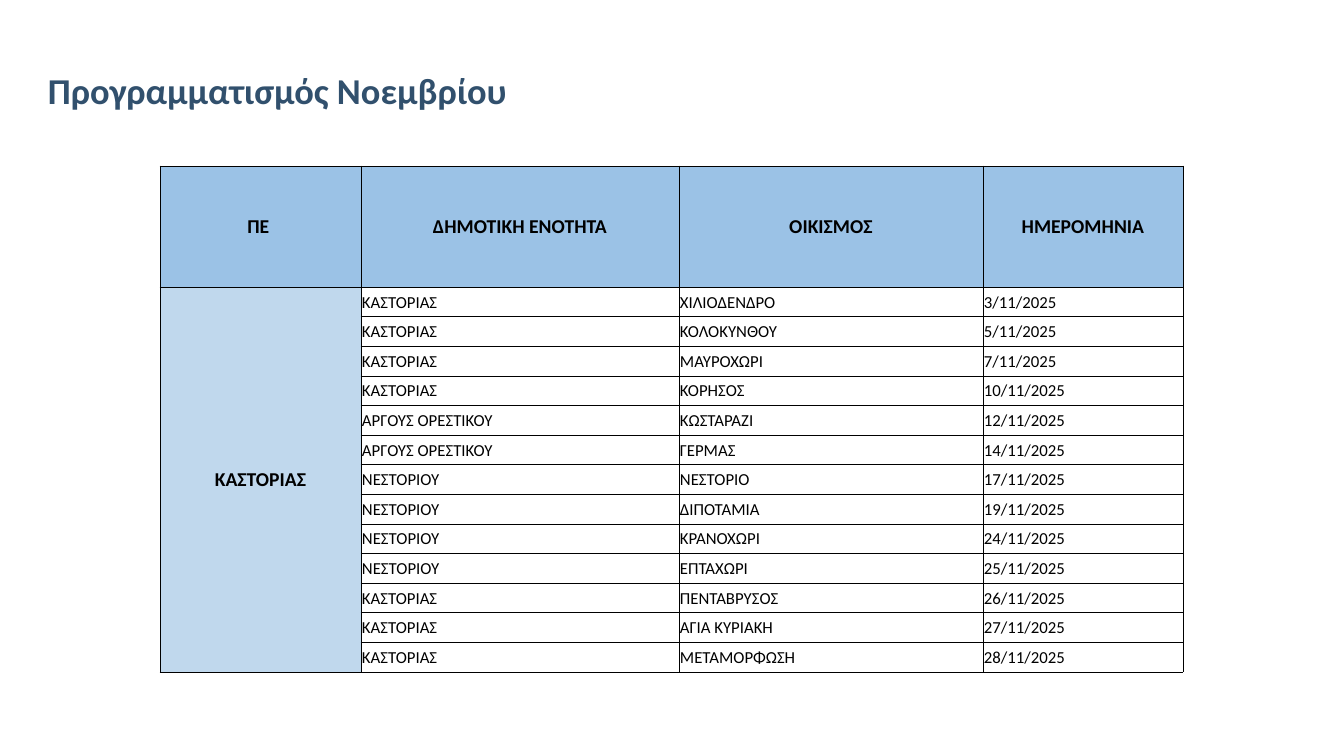
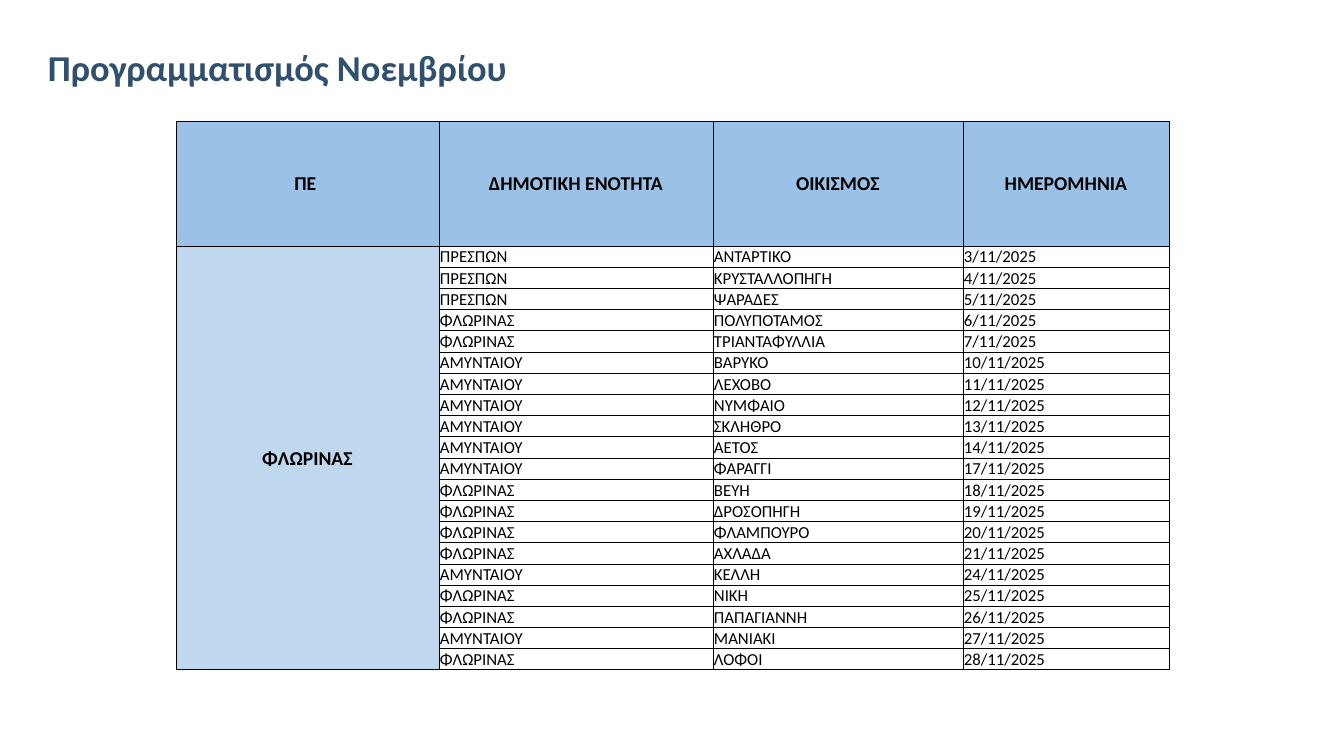
from typing import NamedTuple

from lxml import etree
from pptx import Presentation
from pptx.dml.color import RGBColor
from pptx.enum.text import MSO_ANCHOR, PP_ALIGN
from pptx.oxml.ns import qn
from pptx.util import Emu, Pt

EMU_PER_PX = 914400 / 100.8
FONT = "Calibri"
COLORS = {
    "title": "31506D",
    "text": "000000",
    "border": "000000",
    "header": "9BC2E6",
    "region": "C0D8ED",
}
TOP, MIDDLE, BOTTOM = MSO_ANCHOR.TOP, MSO_ANCHOR.MIDDLE, MSO_ANCHOR.BOTTOM
LEFT, CENTER = PP_ALIGN.LEFT, PP_ALIGN.CENTER

TITLE = "Προγραμματισμός Νοεμβρίου"
HEADERS = ("ΠΕ ", "ΔΗΜΟΤΙΚΗ ΕΝΟΤΗΤΑ", "ΟΙΚΙΣΜΟΣ", "ΗΜΕΡΟΜΗΝΙΑ")


class Visit(NamedTuple):
    municipality: str
    village: str
    day: int


class Schedule(NamedTuple):
    region: str
    title_height: int
    left: int
    top: int
    columns: tuple[int, ...]
    header_height: int
    body_height: int
    visits: list[Visit]


SCHEDULES = [
    Schedule("ΚΑΣΤΟΡΙΑΣ", 92, 160, 166, (201, 318, 304, 200), 121, 385, [
        Visit("ΚΑΣΤΟΡΙΑΣ", "ΧΙΛΙΟΔΕΝΔΡΟ", 3),
        Visit("ΚΑΣΤΟΡΙΑΣ", "ΚΟΛΟΚΥΝΘΟΥ", 5),
        Visit("ΚΑΣΤΟΡΙΑΣ", "ΜΑΥΡΟΧΩΡΙ", 7),
        Visit("ΚΑΣΤΟΡΙΑΣ", "ΚΟΡΗΣΟΣ", 10),
        Visit("ΑΡΓΟΥΣ ΟΡΕΣΤΙΚΟΥ", "ΚΩΣΤΑΡΑΖΙ", 12),
        Visit("ΑΡΓΟΥΣ ΟΡΕΣΤΙΚΟΥ", "ΓΕΡΜΑΣ", 14),
        Visit("ΝΕΣΤΟΡΙΟΥ", "ΝΕΣΤΟΡΙΟ", 17),
        Visit("ΝΕΣΤΟΡΙΟΥ", "ΔΙΠΟΤΑΜΙΑ", 19),
        Visit("ΝΕΣΤΟΡΙΟΥ", "ΚΡΑΝΟΧΩΡΙ", 24),
        Visit("ΝΕΣΤΟΡΙΟΥ", "ΕΠΤΑΧΩΡΙ", 25),
        Visit("ΚΑΣΤΟΡΙΑΣ", "ΠΕΝΤΑΒΡΥΣΟΣ", 26),
        Visit("ΚΑΣΤΟΡΙΑΣ", "ΑΓΙΑ ΚΥΡΙΑΚΗ", 27),
        Visit("ΚΑΣΤΟΡΙΑΣ", "ΜΕΤΑΜΟΡΦΩΣΗ", 28),
    ]),
    Schedule("ΦΛΩΡΙΝΑΣ", 69, 176, 121, (263, 274, 250, 206), 125, 420, [
        Visit("ΠΡΕΣΠΩΝ", "ΑΝΤΑΡΤΙΚΟ", 3),
        Visit("ΠΡΕΣΠΩΝ", "ΚΡΥΣΤΑΛΛΟΠΗΓΗ", 4),
        Visit("ΠΡΕΣΠΩΝ", "ΨΑΡΑΔΕΣ", 5),
        Visit("ΦΛΩΡΙΝΑΣ", "ΠΟΛΥΠΟΤΑΜΟΣ", 6),
        Visit("ΦΛΩΡΙΝΑΣ", "ΤΡΙΑΝΤΑΦΥΛΛΙΑ", 7),
        Visit("AMYNTAIOY", "ΒΑΡΥΚΟ", 10),
        Visit("AMYNTAIOY", "ΛΕΧΟΒΟ", 11),
        Visit("AMYNTAIOY", "ΝΥΜΦΑΙΟ", 12),
        Visit("AMYNTAIOY", "ΣΚΛΗΘΡΟ", 13),
        Visit("AMYNTAIOY", "ΑΕΤΟΣ", 14),
        Visit("AMYNTAIOY", "ΦΑΡΑΓΓΙ", 17),
        Visit("ΦΛΩΡΙΝΑΣ", "ΒΕΥΗ", 18),
        Visit("ΦΛΩΡΙΝΑΣ", "ΔΡΟΣΟΠΗΓΗ", 19),
        Visit("ΦΛΩΡΙΝΑΣ", "ΦΛΑΜΠΟΥΡΟ", 20),
        Visit("ΦΛΩΡΙΝΑΣ", "ΑΧΛΑΔΑ", 21),
        Visit("ΑΜΥΝΤΑΙΟΥ", "ΚΕΛΛΗ", 24),
        Visit("ΦΛΩΡΙΝΑΣ", "ΝΙΚΗ", 25),
        Visit("ΦΛΩΡΙΝΑΣ", "ΠΑΠΑΓΙΑΝΝΗ", 26),
        Visit("ΑΜΥΝΤΑΙΟΥ", "ΜΑΝΙΑΚΙ", 27),
        Visit("ΦΛΩΡΙΝΑΣ", "ΛΟΦΟΙ", 28),
    ]),
]


def px(value: float) -> Emu:
    return Emu(round(value * EMU_PER_PX))


def set_font(p, size: int, color: str, bold: bool) -> None:
    p.font.name = FONT
    p.font.size = Pt(size)
    p.font.bold = bold
    p.font.color.rgb = RGBColor.from_string(COLORS[color])


def set_margins(box, left: int, top: int, right: int, bottom: int) -> None:
    box.margin_left, box.margin_top = px(left), px(top)
    box.margin_right, box.margin_bottom = px(right), px(bottom)


def add_title(slide, height: int) -> None:
    tf = slide.shapes.add_textbox(px(36), px(25), px(1250), px(height)).text_frame
    tf.word_wrap = True
    tf.vertical_anchor = BOTTOM
    set_margins(tf, 12, 5, 10, 5)
    p = tf.paragraphs[0]
    p.text = TITLE
    p.line_spacing = 0.9
    set_font(p, 26, "title", True)


def add_borders(cell) -> None:
    tc_pr = cell._tc.get_or_add_tcPr()
    for side in ("lnL", "lnR", "lnT", "lnB"):
        ln = etree.SubElement(tc_pr, qn(f"a:{side}"), w=str(Pt(0.5)))
        fill = etree.SubElement(ln, qn("a:solidFill"))
        etree.SubElement(fill, qn("a:srgbClr"), val=COLORS["border"])


def fill_cell(cell, text: str, fill: str | None = None) -> None:
    """A filled cell is a heading: larger, bold and centred."""
    add_borders(cell)
    set_margins(cell, 1, 1, 1, 0)
    cell.vertical_anchor = MIDDLE
    if fill:
        cell.fill.solid()
        cell.fill.fore_color.rgb = RGBColor.from_string(COLORS[fill])
    else:
        cell.fill.background()
    p = cell.text_frame.paragraphs[0]
    p.text = text
    p.alignment = CENTER if fill else LEFT
    set_font(p, 14 if fill else 12, "text", bool(fill))


def add_schedule(slide, s: Schedule) -> None:
    count = len(s.visits)
    table = slide.shapes.add_table(
        count + 1, len(HEADERS), px(s.left), px(s.top),
        px(sum(s.columns)), px(s.header_height + s.body_height)).table
    table.first_row = table.horz_banding = False

    # Column widths and row heights
    for column, width in zip(table.columns, s.columns):
        column.width = px(width)
    for i, row in enumerate(table.rows):
        row.height = px(s.body_height / count if i else s.header_height)

    # Header row
    for col, header in enumerate(HEADERS):
        fill_cell(table.cell(0, col), header, "header")

    # Region cell spanning all visits
    for row, visit in enumerate(s.visits, 1):
        fill_cell(table.cell(row, 0), s.region if row == 1 else "", "region")
        texts = (visit.municipality, visit.village, f"{visit.day}/11/2025")
        for col, text in enumerate(texts, 1):
            fill_cell(table.cell(row, col), text)
    table.cell(1, 0).merge(table.cell(count, 0))


def main() -> None:
    prs = Presentation()
    prs.slide_width, prs.slide_height = px(1344), px(756)
    for schedule in SCHEDULES:
        slide = prs.slides.add_slide(prs.slide_layouts[6])
        add_title(slide, schedule.title_height)
        add_schedule(slide, schedule)
    prs.save("out.pptx")


if __name__ == "__main__":
    main()
